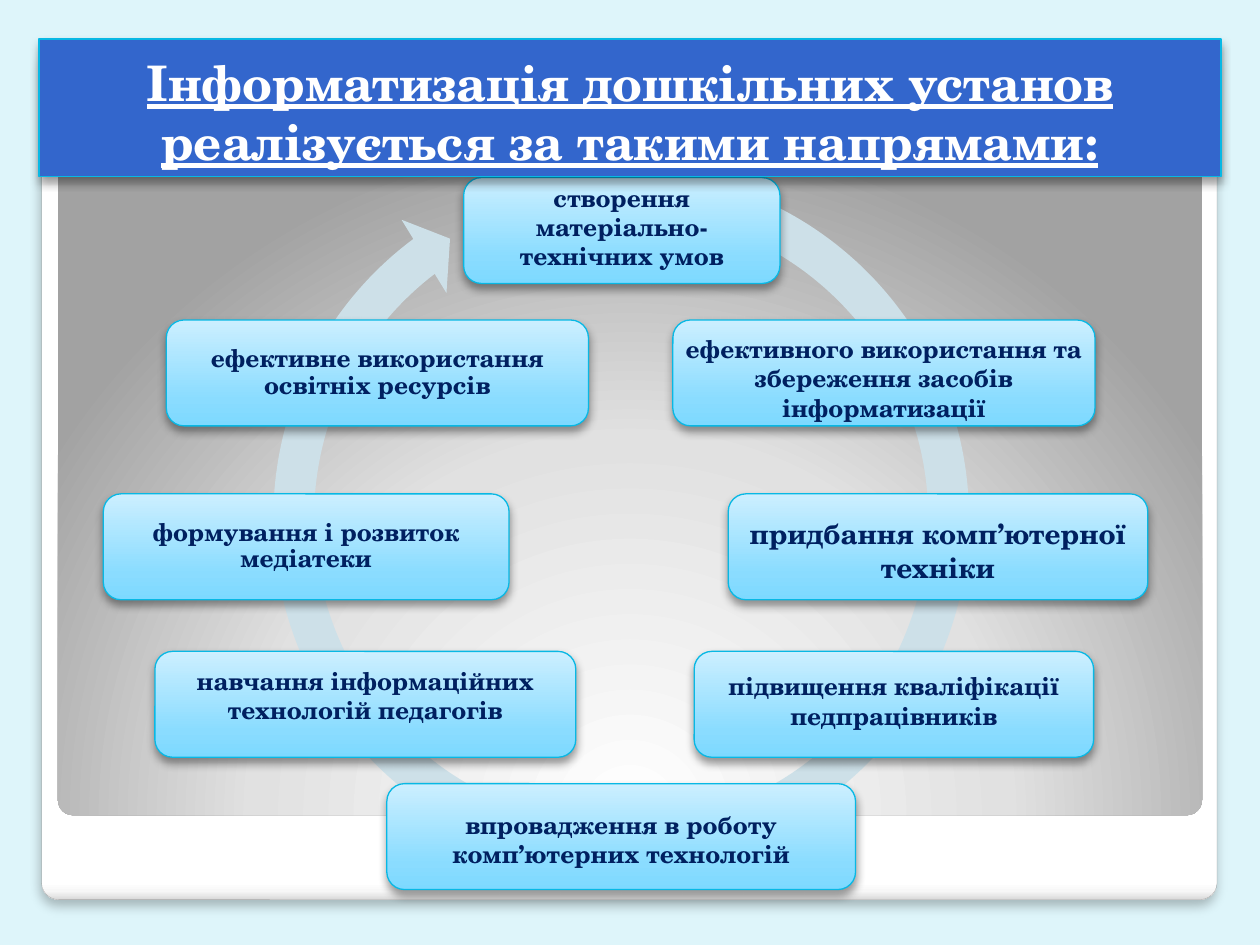
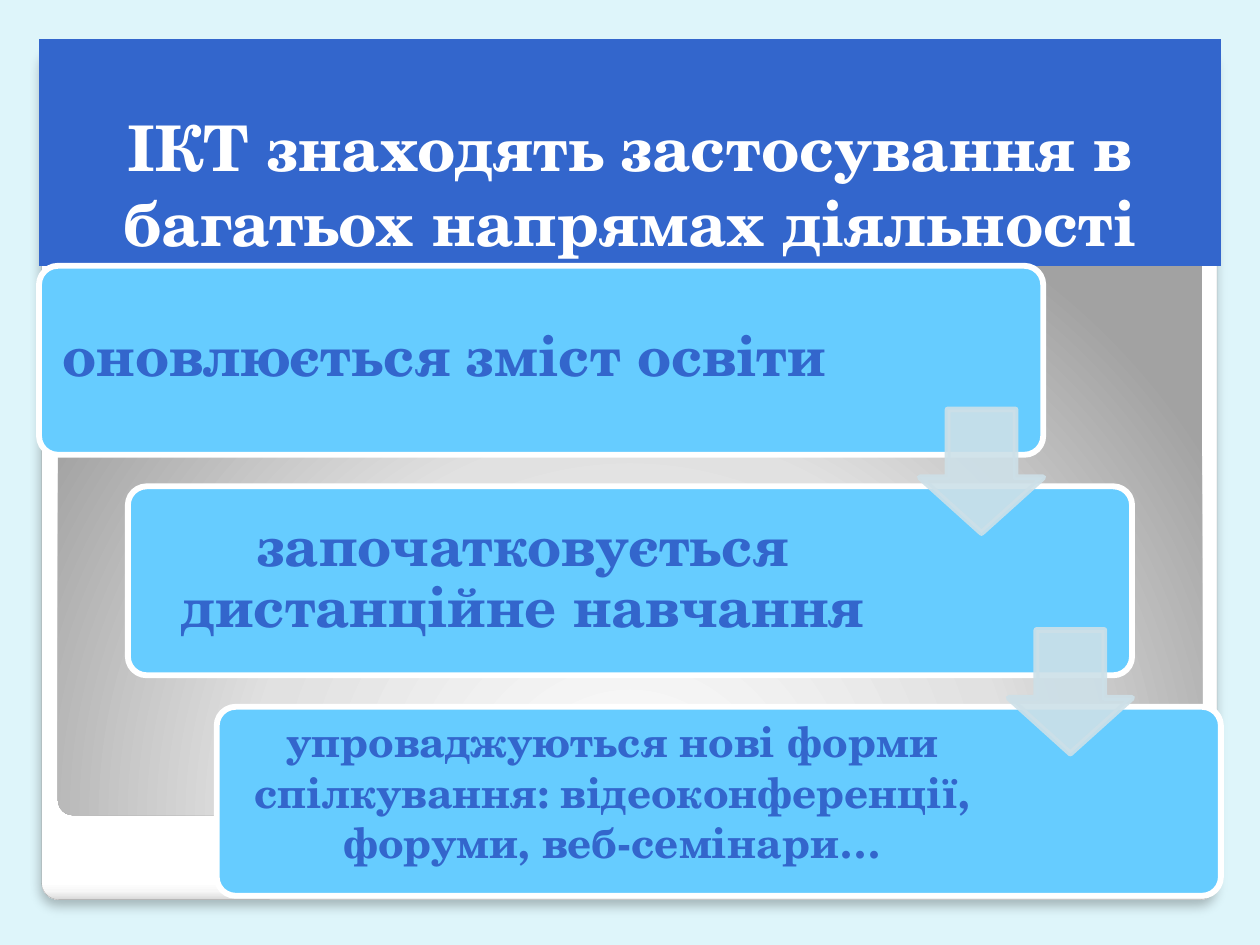
from dataclasses import dataclass

import pptx
import pptx.dml.color
import pptx.enum.shapes
import pptx.enum.text
import pptx.oxml
import pptx.oxml.ns
import pptx.util

Inches = pptx.util.Inches
Shapes = pptx.enum.shapes.MSO_SHAPE
Anchor = pptx.enum.text.MSO_ANCHOR
qn = pptx.oxml.ns.qn
A_NS = pptx.oxml.ns.nsdecls("a")


@dataclass(frozen=True)
class Theme:
    font: str = "TeX Gyre Schola"
    page: str = "DEF5FA"
    band: str = "3366CC"
    edge: str = "08B8E4"
    white: str = "FFFFFF"
    navy: str = "002060"
    sky: str = "66CCFF"
    pale: str = "CDE0E8"
    frame_edge: str = "A4A4A4"
    frame: tuple = ((0, "FFFFFF"), (98, "FFFFFF"), (99, "F7F7F7"), (100, "DADADA"))
    glow: tuple = ((0, "FFFFFF"), (55, "E1E1E1"), (100, "A2A2A2"))
    gloss: tuple = ((0, "7DD9FF"), (25, "8ADCFF"), (100, "CCEFFF"))
    frame_shadow: tuple = (25, 6, 4)
    card_shadow: tuple = (40, 5.2, 3)
    direction_size: int = 14
    direction_large: int = 16
    step_size: int = 32
    step_small: int = 24
    card_line: float = 0.75
    step_line: float = 3.35


THEME = Theme()


@dataclass(frozen=True)
class Box:
    left: float
    top: float
    width: float
    height: float

    def inner(self, dx, dy, width, height):
        """Return a box placed relative to this one's top left corner."""
        return Box(self.left + dx, self.top + dy, width, height)

    def lengths(self):
        return [Inches(v) for v in (self.left, self.top, self.width, self.height)]


def rgb(color):
    return pptx.dml.color.RGBColor.from_string(color)


def set_gradient(shape, stops, direction):
    shape.fill.gradient()
    stop_xml = "".join(
        f'<a:gs pos="{pos * 1000}"><a:srgbClr val="{color}"/></a:gs>'
        for pos, color in stops)
    gradient = pptx.oxml.parse_xml(
        f'<a:gradFill {A_NS} rotWithShape="1"><a:gsLst>{stop_xml}</a:gsLst>'
        f'{direction}</a:gradFill>')
    properties = shape.element.spPr
    properties.replace(properties.find(qn("a:gradFill")), gradient)


def linear(degrees):
    return f'<a:lin ang="{degrees * 60000}" scaled="0"/>'


GLOW_FROM_BELOW = ('<a:path path="circle"><a:fillToRect l="50000" t="175000" '
                   'r="50000" b="-75000"/></a:path>')


def set_shadow(shape, opacity, blur, distance):
    """Cast a black shadow straight down; blur and distance are in points."""
    shape.element.spPr.find(qn("a:effectLst")).append(pptx.oxml.parse_xml(
        f'<a:outerShdw {A_NS} blurRad="{int(blur * 12700)}" '
        f'dist="{int(distance * 12700)}" dir="5400000" rotWithShape="0">'
        f'<a:srgbClr val="000000"><a:alpha val="{opacity * 1000}"/></a:srgbClr>'
        '</a:outerShdw>'))


def set_look(shape, fill=None, gradient=None, direction=None, line=None,
             line_width=0.75, shadow=None):
    if gradient:
        set_gradient(shape, gradient, direction)
    else:
        shape.fill.solid()
        shape.fill.fore_color.rgb = rgb(fill)
    if line:
        shape.line.color.rgb = rgb(line)
        shape.line.width = pptx.util.Pt(line_width)
    else:
        shape.line.fill.background()
    shape.shadow.inherit = False
    if shadow:
        set_shadow(shape, *shadow)


def add_figure(slide, kind, box, adjustments=(), **look):
    figure = slide.shapes.add_shape(kind, *box.lengths())
    for index, value in enumerate(adjustments):
        figure.adjustments[index] = value
    set_look(figure, **look)
    return figure


def write(shape, text, size, color, underline=None, anchor=Anchor.MIDDLE,
          margins=(0.1, 0.05, 0.1, 0.05), spacing=None):
    """Fill a shape with bold centred text; margins are left, top, right, bottom."""
    frame = shape.text_frame
    frame.word_wrap = True
    frame.auto_size = pptx.enum.text.MSO_AUTO_SIZE.NONE
    frame.vertical_anchor = anchor
    (frame.margin_left, frame.margin_top,
     frame.margin_right, frame.margin_bottom) = [Inches(m) for m in margins]
    frame.text = text
    for paragraph in frame.paragraphs:
        paragraph.alignment = pptx.enum.text.PP_ALIGN.CENTER
        paragraph.line_spacing = spacing
        for run in paragraph.runs:
            run.font.name = THEME.font
            run.font.size = pptx.util.Pt(size)
            run.font.bold = True
            run.font.underline = underline
            run.font.color.rgb = rgb(color)


def set_master(prs, slide):
    """Give the master its page colour and the two panels behind every slide."""
    master = prs.slide_master
    master.background.fill.solid()
    master.background.fill.fore_color.rgb = rgb(THEME.page)
    panels = (
        add_figure(slide, Shapes.ROUNDED_RECTANGLE, Box(0.33, 0.36, 9.33, 6.78),
                   [0.02], gradient=THEME.frame, direction=linear(90),
                   line=THEME.frame_edge, line_width=0.16,
                   shadow=THEME.frame_shadow),
        add_figure(slide, Shapes.ROUNDED_RECTANGLE, Box(0.46, 0.47, 9.08, 6),
                   [0.02], gradient=THEME.glow, direction=GLOW_FROM_BELOW),
    )
    for order, panel in enumerate(panels):
        panel.element.nvSpPr.cNvPr.id = 101 + order
        master.shapes.element.insert(2 + order, panel.element)


def place_title(slide, text, box, size, underline=None, **look):
    title = slide.shapes.title
    title.left, title.top, title.width, title.height = box.lengths()
    set_look(title, fill=THEME.band, **look)
    write(title, text, size, THEME.white, underline=underline, anchor=Anchor.BOTTOM)
    return title


# text, left and top within the ring, width, side margin, downward shift, size
DIRECTIONS = (
    ("створення матеріально-технічних умов", 2.86, 0.24, 2.51, 0.06, -0.03, THEME.direction_size),
    ("ефективного використання та збереження засобів інформатизації",
     4.52, 1.37, 3.35, 0.04, 0.04, THEME.direction_size),
    ("придбання комп’ютерної техніки", 4.96, 2.75, 3.33, 0.05, 0.03, THEME.direction_large),
    ("підвищення кваліфікації педпрацівників", 4.69, 4, 3.17, 0.06, -0.03, THEME.direction_size),
    ("впровадження в роботу комп’ютерних технологій",
     2.25, 5.05, 3.72, 0.05, 0.02, THEME.direction_size),
    ("навчання інформаційних\nтехнологій педагогів",
     0.41, 4, 3.34, 0.06, -0.07, THEME.direction_size),
    ("формування і розвиток медіатеки", 0, 2.75, 3.22, 0.06, 0, THEME.direction_size),
    ("ефективне використання освітніх ресурсів",
     0.5, 1.37, 3.35, 0.06, 0, THEME.direction_size),
)


def add_direction_ring(slide, box):
    add_figure(slide, Shapes.CIRCULAR_ARROW, box.inner(1.17, 0, 5.88, 5.88),
               [0.055, 3.307, 139.788, 172.637, 0.058], fill=THEME.pale)
    for text, dx, dy, width, side, shift, size in DIRECTIONS:
        card = add_figure(slide, Shapes.ROUNDED_RECTANGLE,
                          box.inner(dx, dy, width, 0.84),
                          gradient=THEME.gloss, direction=linear(270),
                          line=THEME.edge, line_width=THEME.card_line,
                          shadow=THEME.card_shadow)
        write(card, text, size, THEME.navy, spacing=1 if shift else 0.9,
              margins=(side, max(0, 2 * shift), side, max(0, -2 * shift)))


# text, size, side margin, right margin, bottom margin, line spacing
STEPS = (
    ("оновлюється зміст освіти", THEME.step_size, 0.13, 1.66, 0.13, 0.9),
    ("започатковується дистанційне навчання", THEME.step_size, 0.13, 1.82, 0.13, 0.9),
    ("упроваджуються нові форми спілкування: відеоконференції, форуми, веб-семінари…",
     THEME.step_small, 0.1, 1.79, 0.26, 1),
)


def add_staircase(slide, box):
    """Spread the steps from the top left to the bottom right of the box."""
    width, height, arrow_side = 7.97, 1.5, 0.98
    gaps = len(STEPS) - 1
    across, down = (box.width - width) / gaps, (box.height - height) / gaps
    steps = [box.inner(i * across, i * down, width, height) for i in range(len(STEPS))]
    for step, (text, size, side, right, bottom, spacing) in zip(steps, STEPS):
        card = add_figure(slide, Shapes.ROUNDED_RECTANGLE, step, [0.1],
                          fill=THEME.sky, line=THEME.white,
                          line_width=THEME.step_line)
        write(card, text, size, THEME.band, spacing=spacing,
              margins=(side, 0.1, right, bottom))
    for step in steps[:-1]:
        arrow = add_figure(slide, Shapes.DOWN_ARROW,
                           step.inner(width - arrow_side, 1.14, arrow_side, arrow_side),
                           [0.55, 0.45], fill=THEME.pale, line=THEME.pale,
                           line_width=THEME.step_line)
        for color in arrow.element.spPr.iter(qn("a:srgbClr")):
            color.append(pptx.oxml.parse_xml(f'<a:alpha {A_NS} val="90000"/>'))


def build_directions(slide):
    add_direction_ring(slide, Box(0.82, 1.17, 8.29, 5.89))
    title = place_title(
        slide, "Інформатизація дошкільних установ реалізується за такими напрямами:",
        Box(0.31, 0.31, 9.38, 1.09), 28, underline=True, line=THEME.edge,
        line_width=THEME.card_line, shadow=THEME.card_shadow)
    slide.shapes.element.append(title.element)  # the band covers the top card


def build_applications(slide):
    place_title(slide, "ІКТ знаходять застосування в багатьох напрямах діяльності",
                Box(0.31, 0.31, 9.38, 1.8), 36)
    add_staircase(slide, Box(0.31, 2.11, 9.38, 5))


def main():
    prs = pptx.Presentation()
    prs.slide_width, prs.slide_height = Inches(10), Inches(7.5)
    title_only = prs.slide_layouts[5]
    directions = prs.slides.add_slide(title_only)
    set_master(prs, directions)
    build_directions(directions)
    build_applications(prs.slides.add_slide(title_only))
    prs.save("out.pptx")


if __name__ == "__main__":
    main()
